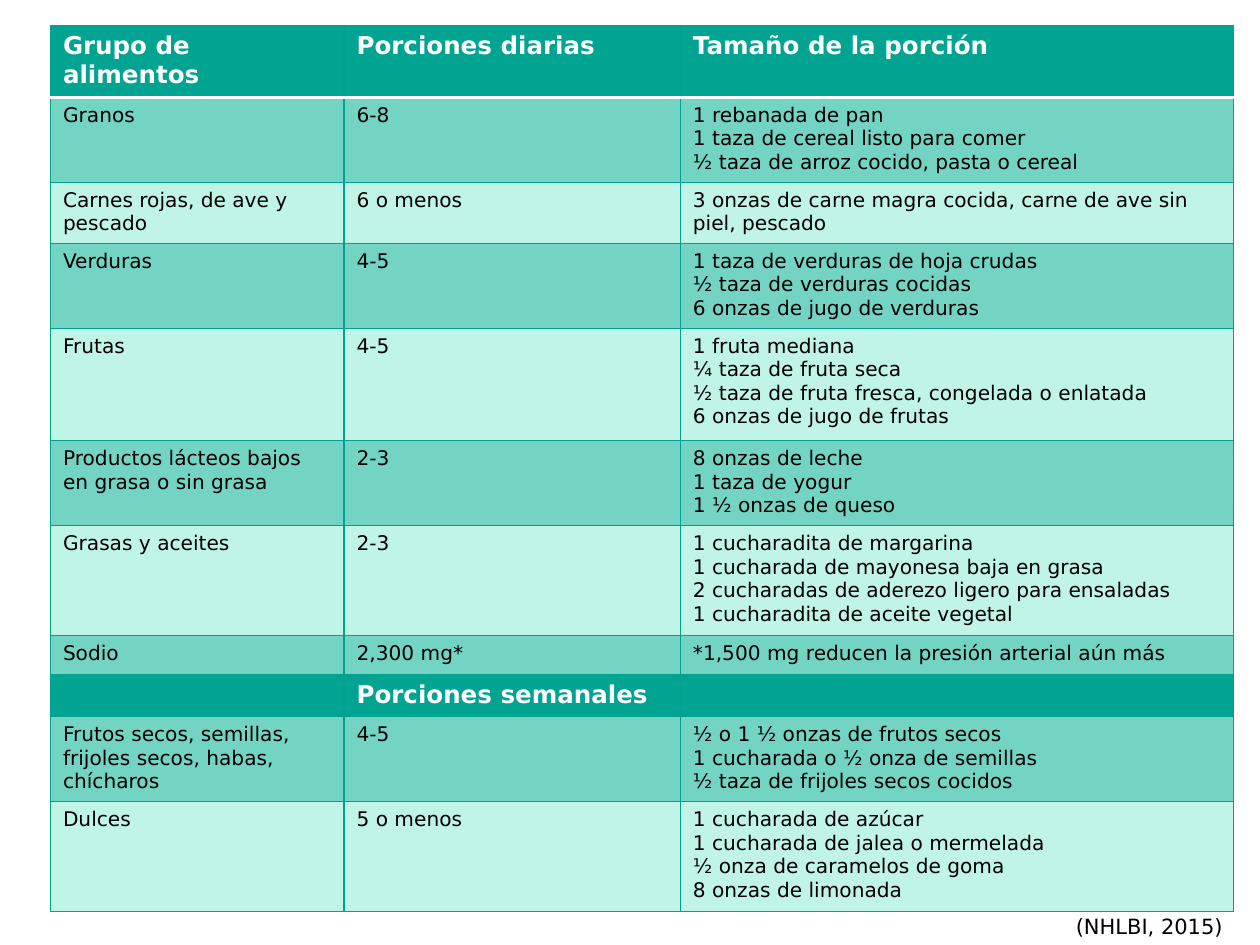
from lxml import etree
from pptx import Presentation
from pptx import util as u
from pptx.dml.color import RGBColor
from pptx.oxml.ns import qn

FONT = "DejaVu Sans"
WHITE, BLACK = "FFFFFF", "000000"
TEAL, DARK_BAND, LIGHT_BAND, GRID = "01A490", "73D4C4", "BFF4E7", "00A18E"
HEADING_SIZE, BODY_SIZE, SOURCE_SIZE = 14, 11.5, 12

COLUMN_WIDTHS = [2.33, 2.67, 4.39]
ROW_HEIGHTS = [0.57, 0.67, 0.48, 0.67, 0.89, 0.67, 0.87, 0.31, 0.33, 0.67, 0.87]
HEADING_ROWS = (0, 8)
ROWS = [
    ("Grupo de alimentos", "Porciones diarias", "Tamaño de la porción"),
    ("Granos", "6-8",
     "1 rebanada de pan\n1 taza de cereal listo para comer\n"
     "½ taza de arroz cocido, pasta o cereal"),
    ("Carnes rojas, de ave y pescado", "6 o menos",
     "3 onzas de carne magra cocida, carne de ave sin piel, pescado"),
    ("Verduras", "4-5",
     "1 taza de verduras de hoja crudas\n½ taza de verduras cocidas\n"
     "6 onzas de jugo de verduras"),
    ("Frutas", "4-5",
     "1 fruta mediana\n¼ taza de fruta seca\n"
     "½ taza de fruta fresca, congelada o enlatada\n6 onzas de jugo de frutas"),
    ("Productos lácteos bajos en grasa o sin grasa", "2-3",
     "8 onzas de leche\n1 taza de yogur\n1 ½ onzas de queso"),
    ("Grasas y aceites", "2-3",
     "1 cucharadita de margarina\n1 cucharada de mayonesa baja en grasa\n"
     "2 cucharadas de aderezo ligero para ensaladas\n"
     "1 cucharadita de aceite vegetal"),
    ("Sodio", "2,300 mg*", "*1,500 mg reducen la presión arterial aún más"),
    ("", "Porciones semanales", ""),
    ("Frutos secos, semillas, frijoles secos, habas, chícharos", "4-5",
     "½ o 1 ½ onzas de frutos secos\n1 cucharada o ½ onza de semillas\n"
     "½ taza de frijoles secos cocidos"),
    ("Dulces", "5 o menos",
     "1 cucharada de azúcar\n1 cucharada de jalea o mermelada\n"
     "½ onza de caramelos de goma\n8 onzas de limonada"),
]


def color(hex_string):
    return RGBColor.from_string(hex_string)


def write_text(frame, content, size, hex_string, bold=False):
    frame.text = content
    for paragraph in frame.paragraphs:
        font = paragraph.font
        font.name, font.size, font.bold = FONT, u.Pt(size), bold
        font.color.rgb = color(hex_string)


def set_borders(cell, **sides):
    """Draw each side (L, R, T, B) from its (colour, points) pair."""
    properties = cell._tc.get_or_add_tcPr()
    for position, side in enumerate("LRTB"):
        hex_string, points = sides.get(side, (GRID, 0.75))
        line = etree.Element(qn(f"a:ln{side}"), w=str(int(u.Pt(points))))
        fill = etree.SubElement(line, qn("a:solidFill"))
        etree.SubElement(fill, qn("a:srgbClr"), val=hex_string)
        properties.insert(position, line)


def fill_cell(cell, content, row_index):
    is_heading = row_index in HEADING_ROWS
    band = DARK_BAND if row_index % 2 else LIGHT_BAND
    cell.fill.solid()
    cell.fill.fore_color.rgb = color(TEAL if is_heading else band)
    if is_heading:
        write_text(cell.text_frame, content, HEADING_SIZE, WHITE, bold=True)
    else:
        write_text(cell.text_frame, content, BODY_SIZE, BLACK)
    if not content:
        cell.margin_top = cell.margin_bottom = 0
    header_rule = (WHITE, 2)
    if row_index == 0:
        set_borders(cell, B=header_rule)
    elif row_index == 1:
        set_borders(cell, T=header_rule)
    else:
        set_borders(cell)


def add_portions_table(slide, left, top, width, height):
    frame = slide.shapes.add_table(len(ROWS), len(COLUMN_WIDTHS),
                                   left, top, width, height)
    table = frame.table
    table.horz_banding = False
    for column, share in zip(table.columns, COLUMN_WIDTHS):
        column.width = int(width * share / sum(COLUMN_WIDTHS))
    for row, share in zip(table.rows, ROW_HEIGHTS):
        row.height = int(height * share / sum(ROW_HEIGHTS))
    for row_index, contents in enumerate(ROWS):
        for column_index, content in enumerate(contents):
            fill_cell(table.cell(row_index, column_index), content, row_index)


def add_source(slide, left, top, width, height):
    box = slide.shapes.add_textbox(left, top, width, height)
    box.text_frame.word_wrap = True
    write_text(box.text_frame, "(NHLBI, 2015)", SOURCE_SIZE, BLACK)


def main():
    presentation = Presentation()
    presentation.slide_width = u.Inches(10)
    presentation.slide_height = u.Inches(7.5)
    slide = presentation.slides.add_slide(presentation.slide_layouts[6])
    add_source(slide, u.Inches(8.44), u.Inches(7.2), u.Inches(1.56), u.Inches(0.3))
    add_portions_table(slide, u.Inches(0.4), u.Inches(0.2),
                       u.Inches(9.39), u.Inches(7.01))
    presentation.save("out.pptx")


if __name__ == "__main__":
    main()
